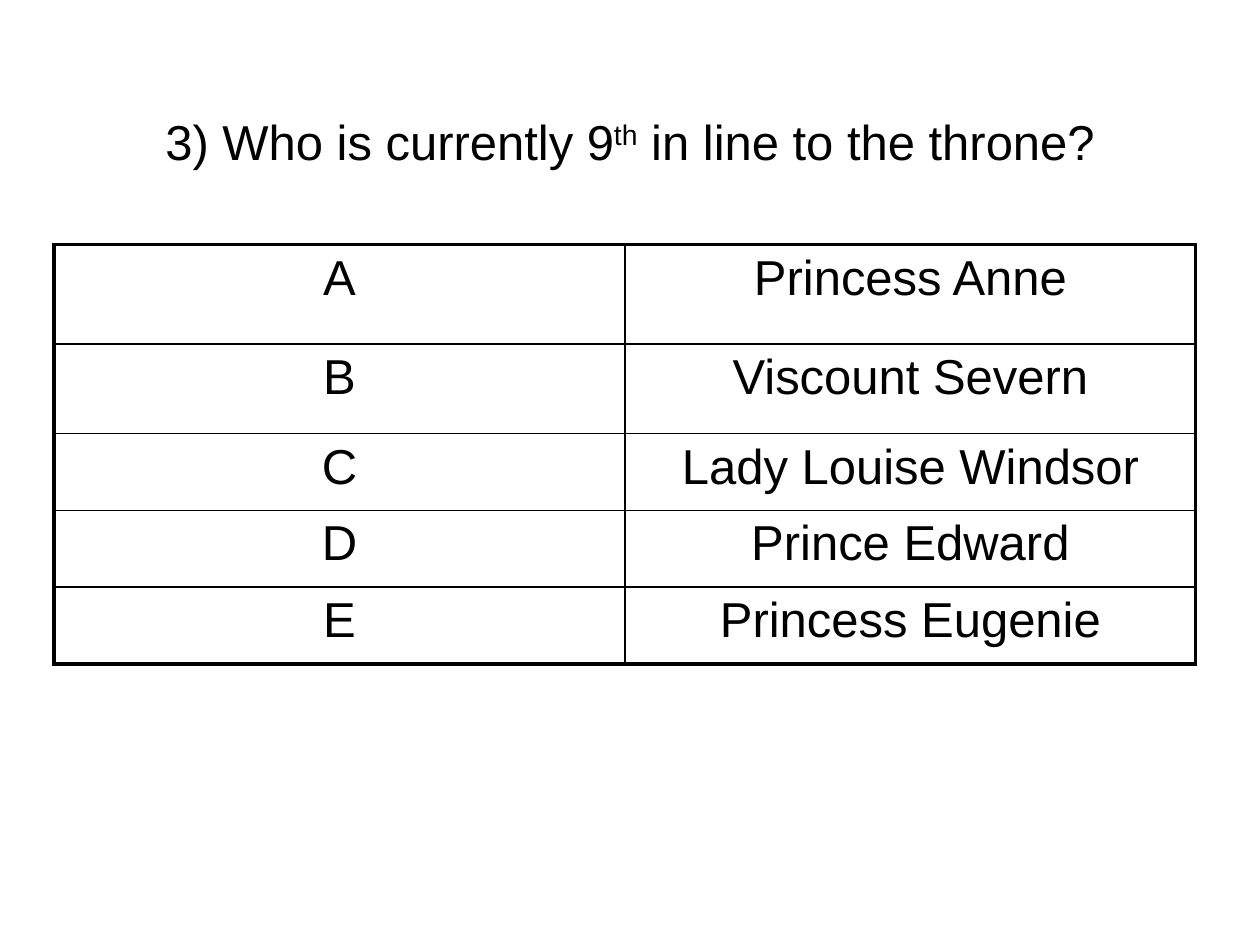
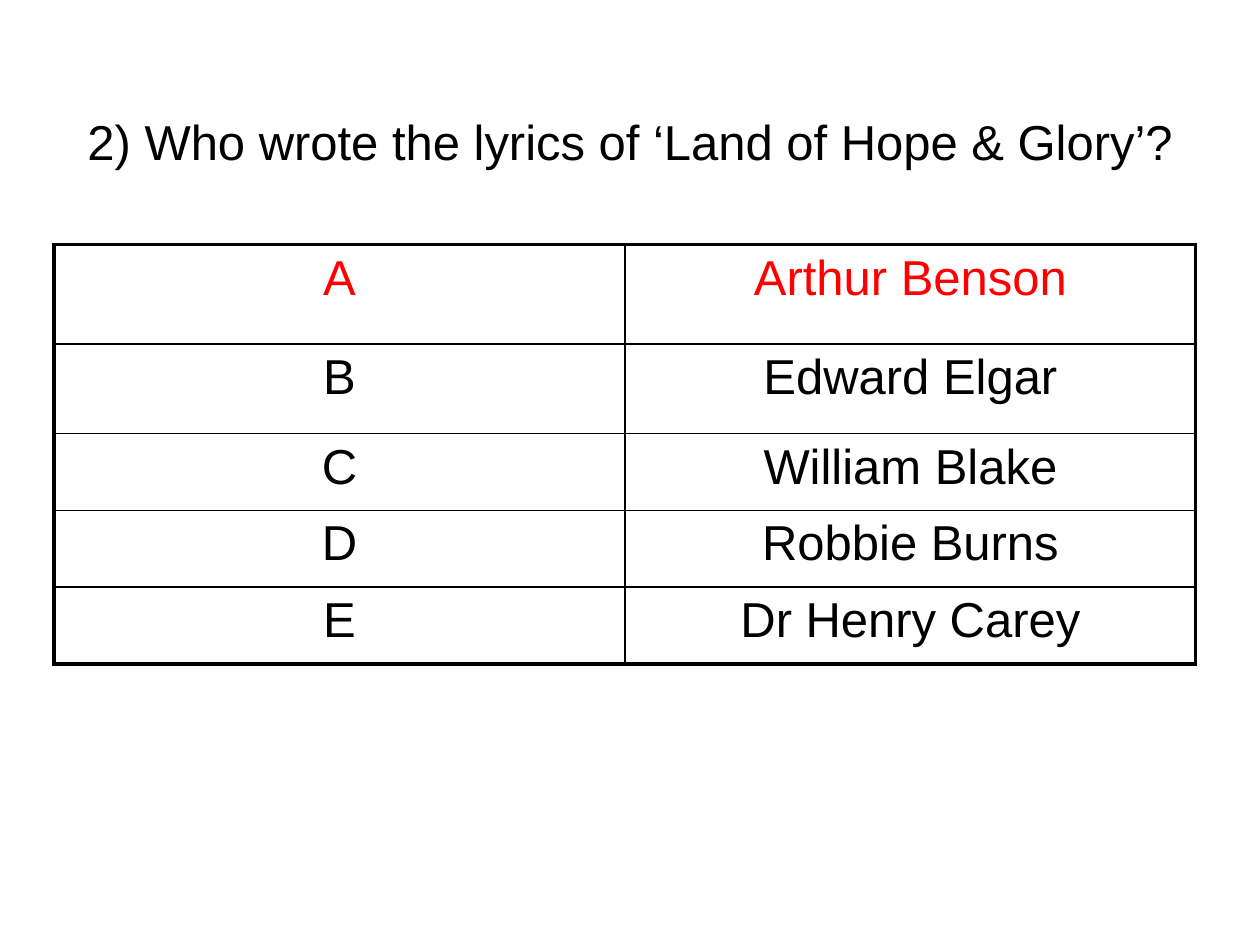
from lxml.etree import SubElement
from pptx import Presentation
from pptx.dml.color import RGBColor
from pptx.enum.text import MSO_ANCHOR, MSO_AUTO_SIZE, PP_ALIGN
from pptx.oxml.ns import qn
from pptx.util import Inches, Pt

COLORS = {"text": "000000", "correct": "FF0000", "border": "000000"}
FONT = {"name": "Arial", "size": Pt(28), "bold": False}
TITLE_FRAME = {
    "word_wrap": True,
    "auto_size": MSO_AUTO_SIZE.NONE,
    "vertical_anchor": MSO_ANCHOR.MIDDLE,
}
TITLE_BOX = {"left": 0.5, "top": 0.3, "width": 9, "height": 1.64}
TABLE_LEFT, TABLE_TOP = 0.43, 1.94
COLUMN_WIDTHS = [4.53, 4.53]
ROW_HEIGHTS = [0.79, 0.71, 0.61, 0.61, 0.61]
OUTER_LINE, INNER_LINE = Pt(2.25), Pt(1)
SUPERSCRIPT = "30000"
SPACE_BEFORE = "20000"

QUESTIONS = [
    {
        "title": [("3) Who is currently 9", None), ("th", SUPERSCRIPT),
                  (" in line to the throne?", None)],
        "answers": ["Princess Anne", "Viscount Severn", "Lady Louise Windsor",
                    "Prince Edward", "Princess Eugenie"],
        "correct": None,
    },
    {
        "title": [("2) Who wrote the lyrics of ‘Land of Hope & Glory’?", None)],
        "answers": ["Arthur Benson", "Edward Elgar", "William Blake",
                    "Robbie Burns", "Dr Henry Carey"],
        "correct": "A",
    },
]


def set_all(target, values):
    for attribute, value in values.items():
        setattr(target, attribute, value)


def add_run(paragraph, text, color, baseline=None):
    run = paragraph.add_run()
    run.text = text
    set_all(run.font, FONT)
    run.font.color.rgb = RGBColor.from_string(COLORS[color])
    if baseline:
        run.font._element.set("baseline", baseline)


def add_question(slide, parts):
    title = slide.shapes.title
    set_all(title, {side: Inches(value) for side, value in TITLE_BOX.items()})
    set_all(title.text_frame, TITLE_FRAME)
    paragraph = title.text_frame.paragraphs[0]
    paragraph.alignment = PP_ALIGN.CENTER
    for text, baseline in parts:
        add_run(paragraph, text, "text", baseline)


def set_borders(cell, widths):
    properties = cell._tc.get_or_add_tcPr()
    for side, width in widths.items():
        line = SubElement(properties, qn(f"a:ln{side}"), w=str(width))
        fill = SubElement(line, qn("a:solidFill"))
        SubElement(fill, qn("a:srgbClr"), val=COLORS["border"])


def fill_cell(cell, text, color):
    paragraph = cell.text_frame.paragraphs[0]
    paragraph.alignment = PP_ALIGN.CENTER
    spacing = SubElement(paragraph._p.get_or_add_pPr(), qn("a:spcBef"))
    SubElement(spacing, qn("a:spcPct"), val=SPACE_BEFORE)
    add_run(paragraph, text, color)


def add_answers(slide, answers, correct):
    last_row, last_column = len(answers) - 1, len(COLUMN_WIDTHS) - 1
    table = slide.shapes.add_table(
        len(answers), len(COLUMN_WIDTHS), Inches(TABLE_LEFT), Inches(TABLE_TOP),
        Inches(sum(COLUMN_WIDTHS)), Inches(sum(ROW_HEIGHTS))).table
    set_all(table, {"first_row": False, "horz_banding": False})
    for column, width in zip(table.columns, COLUMN_WIDTHS):
        column.width = Inches(width)
    for row, height in zip(table.rows, ROW_HEIGHTS):
        row.height = Inches(height)

    for row, (letter, answer) in enumerate(zip("ABCDE", answers)):
        color = "correct" if letter == correct else "text"
        for column, text in enumerate((letter, answer)):
            cell = table.cell(row, column)
            fill_cell(cell, text, color)
            on_edge = {"L": column == 0, "R": column == last_column,
                       "T": row == 0, "B": row == last_row}
            set_borders(cell, {side: OUTER_LINE if outer else INNER_LINE
                               for side, outer in on_edge.items()})
            cell.fill.background()


def main():
    quiz = Presentation()
    quiz.slide_width, quiz.slide_height = Inches(10), Inches(7.5)
    for question in QUESTIONS:
        slide = quiz.slides.add_slide(quiz.slide_layouts[5])
        add_question(slide, question["title"])
        add_answers(slide, question["answers"], question["correct"])
    quiz.save("out.pptx")


if __name__ == "__main__":
    main()
